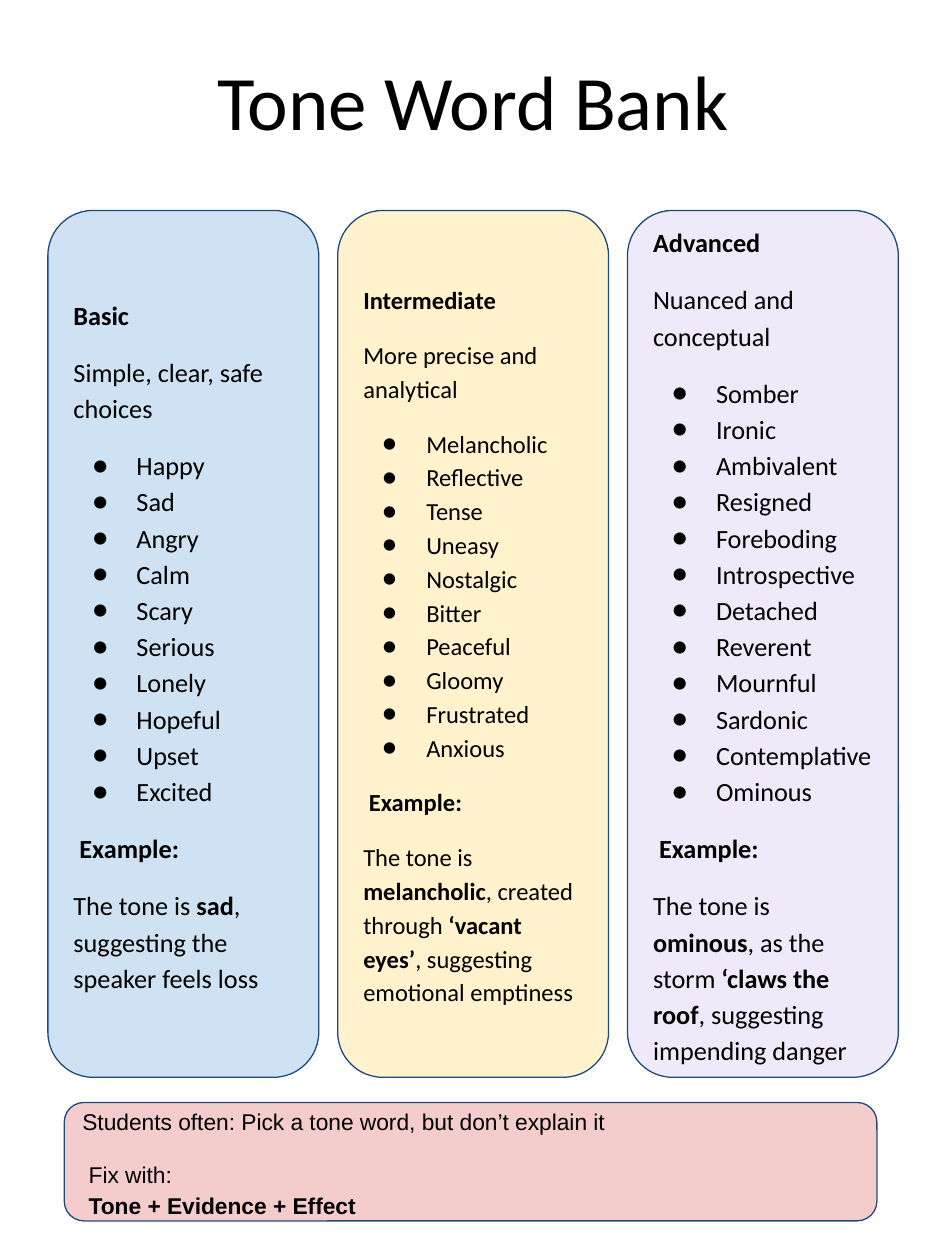
from lxml.etree import SubElement
from pptx import Presentation
from pptx.dml.color import RGBColor
from pptx.enum.shapes import MSO_SHAPE
from pptx.enum.text import MSO_ANCHOR, PP_ALIGN
from pptx.oxml.ns import qn
from pptx.util import Emu, Pt

EMU_PER_PX = 9144
COLORS = {
    "text": "000000",
    "outline": "1F497D",
    "basic": "CFE2F3",
    "intermediate": "FFF2CC",
    "advanced": "EFEAF9",
    "advice": "F4CCCC",
}
COLUMN_LEFT, COLUMN_TOP, COLUMN_WIDTH, COLUMN_HEIGHT = 38, 167, 215, 688
COLUMN_STEP = 230

COLUMNS = [
    {
        "name": "Basic", "fill": "basic", "size": 15,
        "summary": "Simple, clear, safe choices",
        "words": ["Happy", "Sad", "Angry", "Calm", "Scary", "Serious",
                  "Lonely", "Hopeful", "Upset", "Excited"],
        "example": [("The tone is ", False), ("sad", True),
                    (", suggesting the speaker feels loss", False)],
    },
    {
        "name": "Intermediate", "fill": "intermediate", "size": 14,
        "summary": "More precise and analytical",
        "words": ["Melancholic", "Reflective", "Tense", "Uneasy", "Nostalgic",
                  "Bitter", "Peaceful", "Gloomy", "Frustrated", "Anxious"],
        "example": [("The tone is ", False), ("melancholic", True),
                    (", created through ", False), ("‘vacant eyes’", True),
                    (", suggesting emotional emptiness", False)],
    },
    {
        "name": "Advanced", "fill": "advanced", "size": 15,
        "summary": "Nuanced and conceptual",
        "words": ["Somber", "Ironic", "Ambivalent", "Resigned", "Foreboding",
                  "Introspective", "Detached", "Reverent", "Mournful",
                  "Sardonic", "Contemplative", "Ominous"],
        "example": [("The tone is ", False), ("ominous", True),
                    (", as the storm ", False), ("‘claws the roof", True),
                    (", suggesting impending danger", False)],
    },
]


def px(length):
    return Emu(length * EMU_PER_PX)


def color(name):
    return RGBColor.from_string(COLORS[name])


class SlideBuilder:
    def __init__(self, page, font="Calibri"):
        self.page = page
        self.font = font

    def place(self, shape, left, top, width, height):
        shape.left, shape.top = px(left), px(top)
        shape.width, shape.height = px(width), px(height)

    def span(self, para, text, size, bold=False, font=None):
        span = para.add_run()
        span.text = text
        span.font.name = font or self.font
        span.font.size = Pt(size)
        span.font.bold = bold
        span.font.color.rgb = color("text")

    def title(self, text, left, top, width, height):
        title = self.page.shapes.title
        self.place(title, left, top, width, height)
        title.text_frame.vertical_anchor = MSO_ANCHOR.MIDDLE
        para = title.text_frame.paragraphs[0]
        para.alignment = PP_ALIGN.CENTER
        self.span(para, text, 44)

    def panel(self, fill, left, top, width, height):
        box = self.page.shapes.add_shape(
            MSO_SHAPE.ROUNDED_RECTANGLE, px(left), px(top), px(width), px(height))
        box.shadow.inherit = False
        box.fill.solid()
        box.fill.fore_color.rgb = color(fill)
        box.line.color.rgb = color("outline")
        box.line.width = Pt(0.75)
        frame = box.text_frame
        frame.word_wrap = True
        frame.vertical_anchor = MSO_ANCHOR.MIDDLE
        frame.margin_left = frame.margin_right = px(10)
        frame.margin_top = frame.margin_bottom = px(10)
        return frame

    def paragraph(self, frame, spans, size, before=12, after=0, font=None):
        first = frame.paragraphs[0]
        para = frame.add_paragraph() if first.runs else first
        para.alignment = PP_ALIGN.LEFT
        para.line_spacing = 1.15
        para.space_before = Pt(before)
        para.space_after = Pt(after)
        for text, bold in spans:
            self.span(para, text, size, bold, font)
        return para

    def bullets(self, frame, words, size):
        for index, word in enumerate(words):
            before = 0 if index else 12
            para = self.paragraph(frame, [(word, False)], size, before)
            properties = para._p.get_or_add_pPr()
            properties.set("marL", str(px(50)))
            properties.set("indent", str(px(-35)))
            bullet_color = SubElement(properties, qn("a:buClr"))
            SubElement(bullet_color, qn("a:srgbClr"), val=COLORS["text"])
            SubElement(properties, qn("a:buFont"), typeface=self.font)
            SubElement(properties, qn("a:buChar"), char="●")

    def column(self, index, content):
        size = content["size"]
        frame = self.panel(content["fill"], COLUMN_LEFT + index * COLUMN_STEP,
                           COLUMN_TOP, COLUMN_WIDTH, COLUMN_HEIGHT)
        self.paragraph(frame, [(content["name"], True)], size, before=18)
        self.paragraph(frame, [(content["summary"], False)], size)
        self.bullets(frame, content["words"], size)
        self.paragraph(frame, [(" ", False), ("Example:", True)], size)
        self.paragraph(frame, content["example"], size, after=12)

    def advice(self, left, top, width, height):
        size, font = 13, "Arial"
        frame = self.panel("advice", left, top, width, height)
        self.paragraph(
            frame, [("Students often: Pick a tone word, but don’t explain it", False)],
            size, font=font)
        para = self.paragraph(frame, [(" Fix with:", False)], size, after=12, font=font)
        para.add_line_break()
        self.span(para, " ", size, font=font)
        self.span(para, "Tone + Evidence + Effect", size, True, font)


def main():
    deck = Presentation()
    deck.slide_width, deck.slide_height = px(750), px(1000)
    page = deck.slides.add_slide(deck.slide_layouts[5])
    builder = SlideBuilder(page)
    builder.title("Tone Word Bank", 38, -4, 675, 167)
    for index, content in enumerate(COLUMNS):
        builder.column(index, content)
    builder.advice(51, 875, 645, 94)
    deck.save("out.pptx")


if __name__ == "__main__":
    main()
